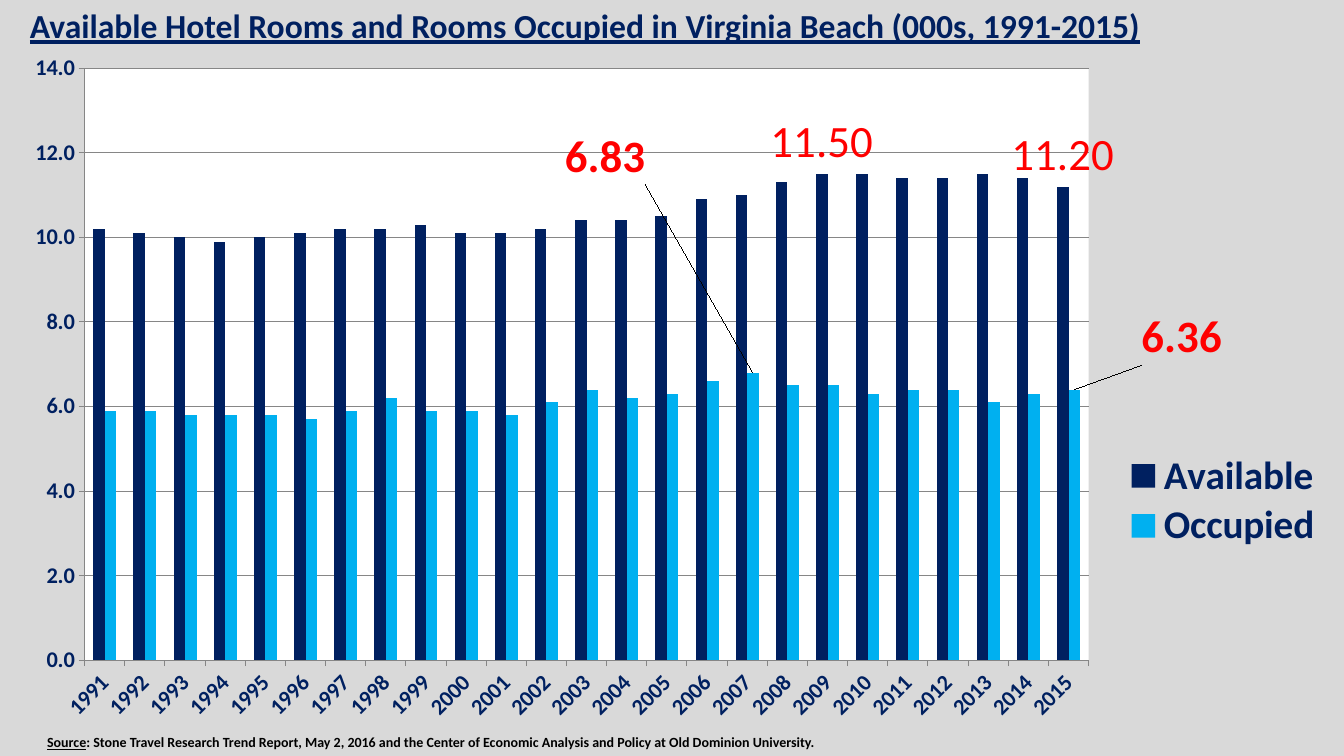
from dataclasses import dataclass

import pptx
import pptx.chart.data
import pptx.dml.color
import pptx.enum.chart
import pptx.enum.text
import pptx.oxml
import pptx.util

Pt = pptx.util.Pt
FONT = "Calibri"
COLORS = {
    "background": "D9D9D9", "navy": "002060", "sky": "00B0F0", "red": "FF0000",
    "black": "000000", "white": "FFFFFF", "grid": "868686",
}
C_NS = 'xmlns:c="http://schemas.openxmlformats.org/drawingml/2006/chart"'
A_NS = 'xmlns:a="http://schemas.openxmlformats.org/drawingml/2006/main"'
C15_NS = 'xmlns:c15="http://schemas.microsoft.com/office/drawing/2012/chart"'


@dataclass
class Callout:
    year: int
    text: str
    bold: bool = False
    shift: tuple[float, float] | None = None


@dataclass
class RoomSeries:
    name: str
    color: str
    values: list[float]
    callouts: list[Callout]


@dataclass
class Run:
    text: str
    underline: bool = False


@dataclass
class TextLine:
    left: float
    top: float
    width: float
    height: float
    size: float
    color: str
    align: pptx.enum.text.PP_ALIGN
    wrap: bool
    runs: list[Run]


FIRST_YEAR, LAST_YEAR = 1991, 2015
SERIES = [
    RoomSeries("Available", "navy",
               [10.2, 10.1, 10, 9.9, 10, 10.1, 10.2, 10.2, 10.3, 10.1, 10.1, 10.2, 10.4,
                10.4, 10.5, 10.9, 11, 11.3, 11.5, 11.5, 11.4, 11.4, 11.5, 11.4, 11.2],
               [Callout(2009, "11.50"), Callout(2015, "11.20")]),
    RoomSeries("Occupied", "sky",
               [5.9, 5.9, 5.8, 5.8, 5.8, 5.7, 5.9, 6.2, 5.9, 5.9, 5.8, 6.1, 6.4,
                6.2, 6.3, 6.6, 6.8, 6.5, 6.5, 6.3, 6.4, 6.4, 6.1, 6.3, 6.4],
               [Callout(2007, "6.83", True, (-0.11, -0.27)),
                Callout(2015, "6.36", True, (0.08, -0.03))]),
]
TEXTS = [
    TextLine(-62, 0, 960, 36, 24, "navy", pptx.enum.text.PP_ALIGN.CENTER, True,
             [Run("Available Hotel Rooms and Rooms Occupied in Virginia Beach "
                  "(000s, 1991-2015)", True)]),
    TextLine(26.6, 520.6, 574, 19.4, 10, "black", pptx.enum.text.PP_ALIGN.LEFT, False,
             [Run("Source", True),
              Run(": Stone Travel Research Trend Report, May 2, 2016 and the Center of "
                  "Economic Analysis and Policy at Old Dominion University.")]),
]


def rgb(name: str) -> pptx.dml.color.RGBColor:
    return pptx.dml.color.RGBColor.from_string(COLORS[name])


def style_font(font, size: float, color: str, bold: bool = True) -> None:
    font.name, font.size, font.bold = FONT, Pt(size), bold
    font.color.rgb = rgb(color)


def add_text(s, line: TextLine) -> None:
    box = s.shapes.add_textbox(Pt(line.left), Pt(line.top), Pt(line.width), Pt(line.height))
    tf = box.text_frame
    tf.word_wrap = line.wrap
    p = tf.paragraphs[0]
    p.alignment = line.align
    for run in line.runs:
        r = p.add_run()
        r.text = run.text
        style_font(r.font, line.size, line.color)
        r.font.underline = run.underline


def layout(x: float, y: float, w: float = 0, h: float = 0, inner: bool = False):
    """Manual layout in fractions of the chart; without a size, an offset."""
    tags = '<c:layoutTarget val="inner"/>' if inner else ""
    if w:
        tags += '<c:xMode val="edge"/><c:yMode val="edge"/>'
    tags += f'<c:x val="{x}"/><c:y val="{y}"/>'
    if w:
        tags += f'<c:w val="{w}"/><c:h val="{h}"/>'
    return pptx.oxml.parse_xml(
        f"<c:layout {C_NS}><c:manualLayout>{tags}</c:manualLayout></c:layout>")


def set_layout(parent, after: str, new_layout) -> None:
    """Put the layout after the named child, or first if no name is given."""
    for old in parent.xpath("./c:layout"):
        parent.remove(old)
    if after:
        parent.xpath(f"./{after}")[0].addnext(new_layout)
    else:
        parent.insert(0, new_layout)


def style_axis(axis) -> None:
    style_font(axis.tick_labels.font, 16, "navy")
    axis.format.line.color.rgb = rgb("grid")
    axis.major_tick_mark = pptx.enum.chart.XL_TICK_MARK.OUTSIDE


def add_callouts(series, ser, callouts: list[Callout]) -> None:
    series.data_labels.show_value = False
    for callout in callouts:
        index = callout.year - FIRST_YEAR
        label = series.points[index].data_label
        p = label.text_frame.paragraphs[0]
        r = p.add_run()
        r.text = callout.text
        style_font(r.font, 32, "red", callout.bold)
        label.position = pptx.enum.chart.XL_LABEL_POSITION.OUTSIDE_END
        if callout.shift:
            d_lbl = ser.xpath(f'./c:dLbls/c:dLbl[c:idx/@val="{index}"]')[0]
            set_layout(d_lbl, "c:idx", layout(*callout.shift))
    if any(callout.shift for callout in callouts):
        ser.xpath("./c:dLbls")[0].append(pptx.oxml.parse_xml(
            f'<c:extLst {C_NS} {C15_NS}><c:ext uri="{{CE6537A1-D6FC-4f65-9D91-7224C49458BB}}">'
            '<c15:showLeaderLines val="1"/></c:ext></c:extLst>'))


def add_room_chart(s) -> None:
    data = pptx.chart.data.CategoryChartData(number_format="#,##0.0")
    data.categories = [str(year) for year in range(FIRST_YEAR, LAST_YEAR + 1)]
    for rooms in SERIES:
        data.add_series(rooms.name, rooms.values)
    chart = s.shapes.add_chart(pptx.enum.chart.XL_CHART_TYPE.COLUMN_CLUSTERED,
                               Pt(0), Pt(39), Pt(960), Pt(486.7), data).chart
    chart.has_title = False
    style_font(chart.font, 18, "black", False)

    plot = chart.plots[0]
    plot.gap_width, plot.overlap, plot.vary_by_categories = 150, 0, False
    for series, ser, rooms in zip(plot.series, chart.element.xpath(".//c:ser"), SERIES):
        series.format.fill.solid()
        series.format.fill.fore_color.rgb = rgb(rooms.color)
        add_callouts(series, ser, rooms.callouts)

    years, amounts = chart.category_axis, chart.value_axis
    style_axis(years)
    style_axis(amounts)
    chart.element.xpath(".//c:catAx/c:txPr/a:bodyPr")[0].set("rot", "-2700000")
    amounts.minimum_scale, amounts.maximum_scale, amounts.major_unit = 0, 14, 2
    amounts.tick_labels.number_format = "#,##0.0"
    amounts.tick_labels.number_format_is_linked = False
    amounts.major_gridlines.format.line.color.rgb = rgb("grid")

    chart.has_legend = True
    chart.legend.position = pptx.enum.chart.XL_LEGEND_POSITION.RIGHT
    chart.legend.include_in_layout = False
    style_font(chart.legend.font, 28, "navy")
    set_layout(chart.element.xpath(".//c:legend")[0], "c:legendPos",
               layout(0.83, 0.58, 0.16, 0.15))

    plot_area = chart.element.xpath(".//c:plotArea")[0]
    set_layout(plot_area, "", layout(0.063, 0.02, 0.747, 0.869, inner=True))
    plot_area.append(pptx.oxml.parse_xml(
        f'<c:spPr {C_NS} {A_NS}><a:solidFill><a:srgbClr val="{COLORS["white"]}"/>'
        "</a:solidFill></c:spPr>"))


def main() -> None:
    prs = pptx.Presentation()
    prs.slide_width, prs.slide_height = Pt(960), Pt(540)
    s = prs.slides.add_slide(prs.slide_layouts[6])
    s.background.fill.solid()
    s.background.fill.fore_color.rgb = rgb("background")
    add_room_chart(s)
    for line in TEXTS:
        add_text(s, line)
    prs.save("out.pptx")


if __name__ == "__main__":
    main()
